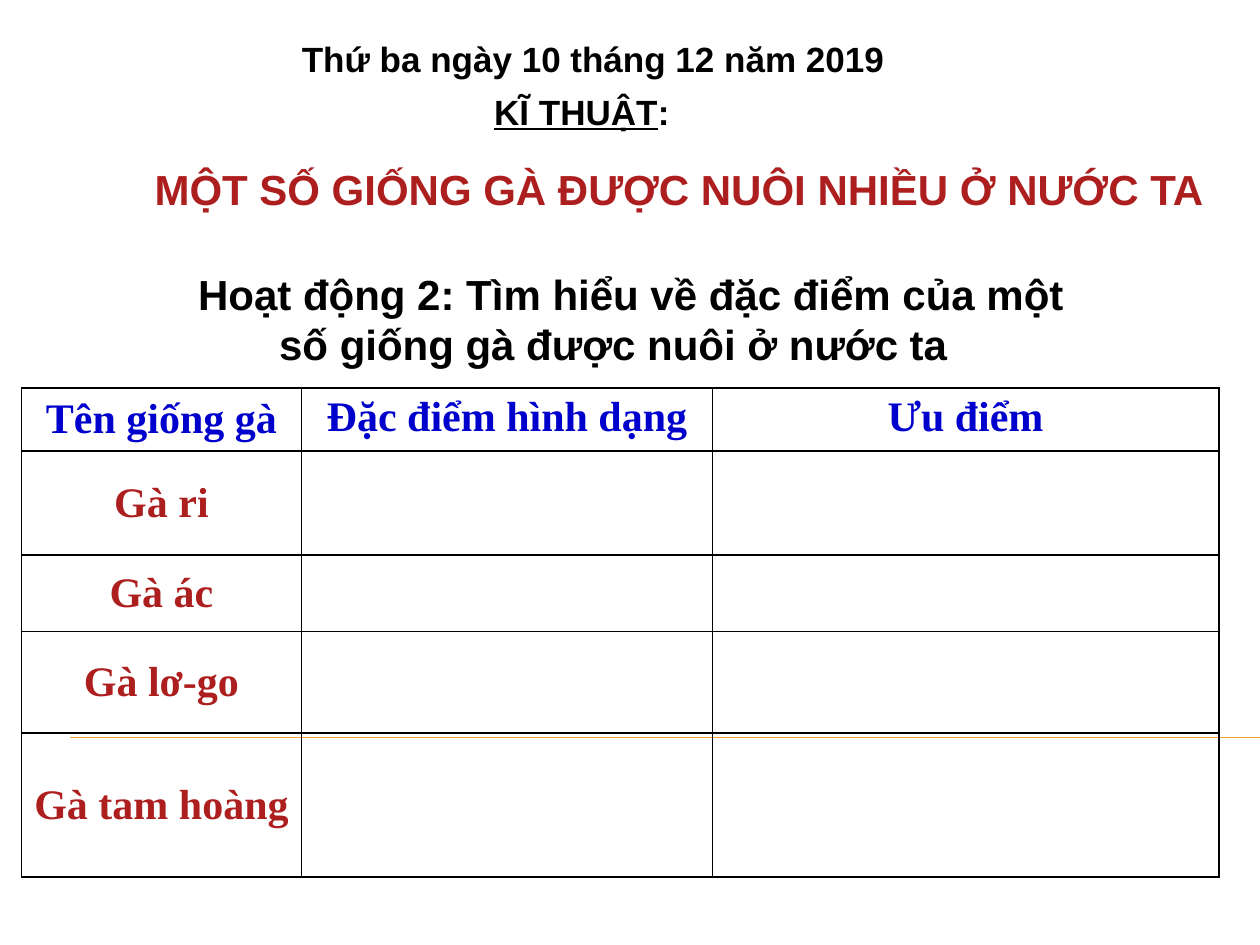
from dataclasses import dataclass

from lxml import etree
from pptx import Presentation
from pptx.dml.color import RGBColor
from pptx.enum.shapes import MSO_CONNECTOR
from pptx.enum.text import MSO_ANCHOR, MSO_AUTO_SIZE, PP_ALIGN
from pptx.oxml.ns import qn
from pptx.util import Cm, Pt

CENTER = PP_ALIGN.CENTER
TOP, MIDDLE = MSO_ANCHOR.TOP, MSO_ANCHOR.MIDDLE
FIT_SHAPE = MSO_AUTO_SIZE.SHAPE_TO_FIT_TEXT
STRAIGHT = MSO_CONNECTOR.STRAIGHT

COLORS = {"black": "000000", "red": "AD1F1F", "blue": "0000CC", "gold": "F0A22E"}
COLUMN_WIDTHS = (5.65, 8.28, 10.21)
ROW_HEIGHTS = (1.2, 2.1, 1.54, 2.05, 2.9)
HEADERS = ("Tên giống gà", "Đặc điểm hình dạng", "Ưu điểm")
BREEDS = ("Gà ri", "Gà ác", "Gà lơ-go", "Gà tam hoàng")


@dataclass
class Heading:
    text: str
    left: float
    top: float
    width: float
    height: float
    size: int
    color: str = "black"
    indent: float = 0
    underlined: str = ""


HEADINGS = (
    Heading("Hoạt động 2: Tìm hiểu về đặc điểm của một số giống gà được nuôi ở nước ta",
            2.74, 5.28, 19.25, 2.29, 24, indent=0.71),
    Heading("Thứ ba ngày 10 tháng 12 năm 2019", 5.28, 0.64, 13.36, 1.09, 20),
    Heading(":", 9.09, 1.7, 5.28, 1.09, 20, underlined="KĨ THUẬT"),
    Heading("MỘT SỐ GIỐNG GÀ ĐƯỢC NUÔI NHIỀU Ở NƯỚC TA",
            1.27, 3.18, 24.13, 1.27, 24, "red", 0.71),
)


def style_run(run, font: str, size: int, color: str) -> None:
    run.font.name = font
    run.font.size = Pt(size)
    run.font.bold = True
    run.font.color.rgb = RGBColor.from_string(COLORS[color])


def add_heading(slide, heading: Heading) -> None:
    box = slide.shapes.add_textbox(Cm(heading.left), Cm(heading.top),
                                   Cm(heading.width), Cm(heading.height))
    frame = box.text_frame
    frame.word_wrap = True
    frame.auto_size = FIT_SHAPE
    paragraph = frame.paragraphs[0]
    paragraph.alignment = CENTER
    if heading.indent:
        paragraph._p.get_or_add_pPr().set("indent", str(Cm(heading.indent)))
    if heading.underlined:
        label = paragraph.add_run()
        label.text = heading.underlined
        label.font.underline = True
    paragraph.add_run().text = heading.text
    for run in paragraph.runs:
        style_run(run, "Arial", heading.size, heading.color)


def outline_cell(cell) -> None:
    properties = cell._tc.get_or_add_tcPr()
    for side in ("a:lnL", "a:lnR", "a:lnT", "a:lnB"):
        border = etree.SubElement(properties, qn(side), w=str(Pt(1)))
        fill = etree.SubElement(border, qn("a:solidFill"))
        etree.SubElement(fill, qn("a:srgbClr"), val=COLORS["black"])
    cell.fill.background()


def write_cell(cell, text: str, color: str, anchor) -> None:
    cell.text_frame.text = text
    cell.vertical_anchor = anchor
    paragraph = cell.text_frame.paragraphs[0]
    paragraph.alignment = CENTER
    paragraph.space_before = Pt(4.8)
    style_run(paragraph.runs[0], "Times New Roman", 24, color)


def add_breed_table(slide) -> None:
    table = slide.shapes.add_table(len(ROW_HEIGHTS), len(COLUMN_WIDTHS), Cm(0.43), Cm(7.82),
                                   Cm(sum(COLUMN_WIDTHS)), Cm(sum(ROW_HEIGHTS))).table
    table.first_row = False
    table.horz_banding = False
    for column, width in zip(table.columns, COLUMN_WIDTHS):
        column.width = Cm(width)
    for row, height in zip(table.rows, ROW_HEIGHTS):
        row.height = Cm(height)
    for cell in table.iter_cells():
        outline_cell(cell)
    for index, header in enumerate(HEADERS):
        write_cell(table.cell(0, index), header, "blue", TOP if index else MIDDLE)
    for index, breed in enumerate(BREEDS, start=1):
        write_cell(table.cell(index, 0), breed, "red", MIDDLE)


def add_rule(slide) -> None:
    rule = slide.shapes.add_connector(STRAIGHT, Cm(1.42), Cm(14.86), Cm(25.4), Cm(14.86))
    rule.line.color.rgb = RGBColor.from_string(COLORS["gold"])
    rule.line.width = Pt(0.75)
    etree.SubElement(rule._element.spPr, qn("a:effectLst"))


def main() -> None:
    """Build the lesson slide on chicken breeds."""
    presentation = Presentation()
    presentation.slide_width = Cm(25.4)
    presentation.slide_height = Cm(19.05)
    slide = presentation.slides.add_slide(presentation.slide_layouts[6])
    add_rule(slide)
    for heading in HEADINGS:
        add_heading(slide, heading)
    add_breed_table(slide)
    presentation.save("out.pptx")


if __name__ == "__main__":
    main()
